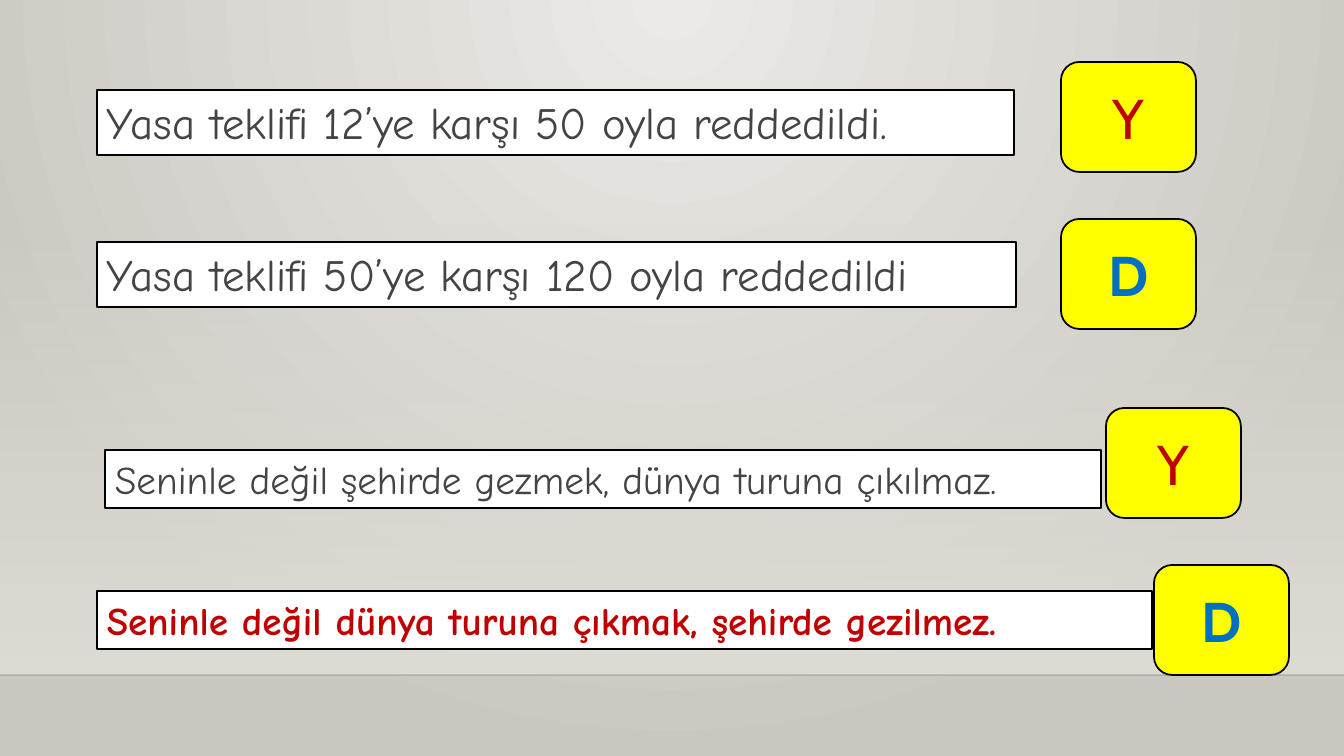
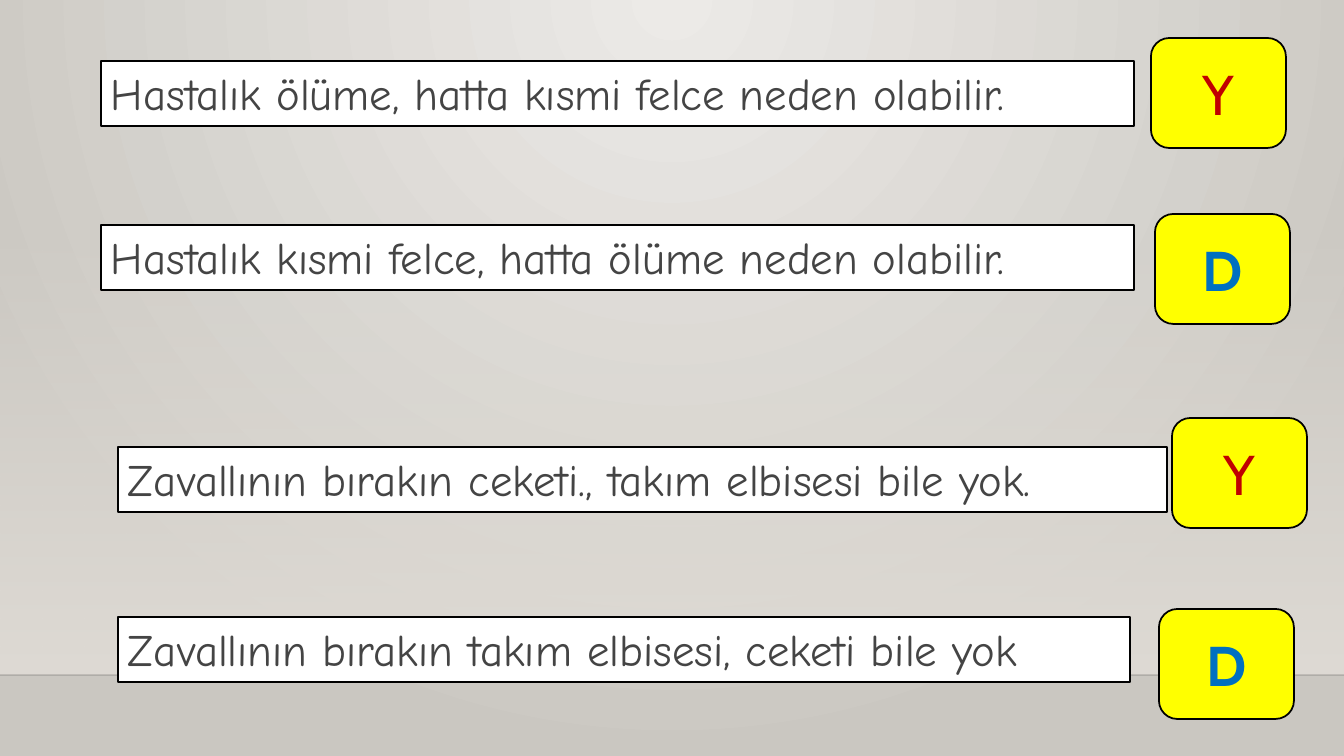
import typing
import dataclasses

import lxml.etree
import pptx
import pptx.dml.color
import pptx.dml.fill
import pptx.enum.shapes
import pptx.enum.text
import pptx.oxml.ns
import pptx.util

RGB = pptx.dml.color.RGBColor
SHAPE = pptx.enum.shapes.MSO_SHAPE
ALIGN = pptx.enum.text.PP_ALIGN
ANCHOR = pptx.enum.text.MSO_ANCHOR

WIDE, HIGH = 1344, 756
SCALE = 12192000 / WIDE
BAND_TOP, FLOOR = 223, 675
CARD_W, CARD_H = 135, 110

GLOW = RGB(0xEC, 0xEA, 0xE7)
EDGE = RGB(0xCA, 0xC7, 0xC1)
WALL = RGB(0xDF, 0xDB, 0xD5)
DARK = RGB(0x00, 0x00, 0x01)
BLACK = RGB(0x00, 0x00, 0x00)
WHITE = RGB(0xFF, 0xFF, 0xFF)
YELLOW = RGB(0xFF, 0xFF, 0x00)
GREY = RGB(0x44, 0x44, 0x44)
RED = RGB(0xC0, 0x00, 0x00)
BLUE = RGB(0x00, 0x70, 0xC0)


@dataclasses.dataclass(frozen=True)
class Row:
    text: str
    left: int
    top: int
    width: int
    mark: str
    card: tuple[int, int]
    size: int = 32
    color: RGB = GREY
    bold: bool = False


DECK = (
    (
        Row("Yasa teklifi 12’ye karşı 50 oyla reddedildi.", 97, 90, 917, "Y", (1061, 62)),
        Row("Yasa teklifi 50’ye karşı 120 oyla reddedildi", 97, 242, 919, "D", (1061, 219)),
        Row("Seninle değil şehirde gezmek, dünya turuna çıkılmaz.", 105, 450, 996,
            "Y", (1106, 408), size=28),
        Row("Seninle değil dünya turuna çıkmak, şehirde gezilmez.", 97, 591, 1055,
            "D", (1154, 565), size=28, color=RED, bold=True),
    ),
    (
        Row("Hastalık ölüme, hatta kısmi felce neden olabilir.", 101, 61, 1033, "Y", (1151, 38)),
        Row("Hastalık kısmi felce, hatta ölüme neden olabilir.", 101, 225, 1033, "D", (1155, 214)),
        Row("Zavallının bırakın ceketi., takım elbisesi bile yok.", 118, 447, 1049,
            "Y", (1172, 418)),
        Row("Zavallının bırakın takım elbisesi, ceketi bile yok", 118, 617, 1012,
            "D", (1159, 609)),
    ),
)
BOX_HIGH = {32: 65, 28: 58}
MARKS = {"Y": (RED, False), "D": (BLUE, True)}


def px(count: int) -> pptx.util.Emu:
    return pptx.util.Emu(round(count * SCALE))


def child(parent: typing.Any, tag: str, **attrs: str) -> typing.Any:
    node = lxml.etree.SubElement(parent, pptx.oxml.ns.qn(tag))
    for name, value in attrs.items():
        node.set(name, value)
    return node


def blend(fill: pptx.dml.fill.FillFormat, first: RGB, last: RGB) -> None:
    fill.gradient()
    for stop, color, place in zip(fill.gradient_stops, (first, last), (0, 1)):
        stop.color.rgb = color
        stop.position = place


def fade(node: typing.Any, share: int) -> None:
    color = node.find(".//" + pptx.oxml.ns.qn("a:srgbClr"))
    child(color, "a:alpha", val=str(share * 1000))


def panel(slide: typing.Any, kind: SHAPE, left: int, top: int,
          width: int, height: int) -> typing.Any:
    shape = slide.shapes.add_shape(kind, px(left), px(top), px(width), px(height))
    shape.shadow.inherit = False
    return shape


def write(shape: typing.Any, text: str, *, font: str, size: int, color: RGB,
          bold: bool = False, align: ALIGN = ALIGN.LEFT,
          anchor: ANCHOR = ANCHOR.TOP) -> None:
    frame = shape.text_frame
    frame.word_wrap = True
    frame.vertical_anchor = anchor
    para = frame.paragraphs[0]
    para.alignment = align
    run = para.add_run()
    run.text = text
    run.font.name = font
    run.font.size = pptx.util.Pt(size)
    run.font.bold = bold
    run.font.color.rgb = color


def label(slide: typing.Any, kind: SHAPE, left: int, top: int, width: int,
          height: int, fill: RGB, text: str, **style: typing.Any) -> None:
    shape = panel(slide, kind, left, top, width, height)
    shape.fill.solid()
    shape.fill.fore_color.rgb = fill
    shape.line.color.rgb = BLACK
    shape.line.width = pptx.util.Pt(1.25)
    write(shape, text, **style)


def backdrop(master: typing.Any) -> None:
    blend(master.background.fill, GLOW, EDGE)
    grad = master.element.find(".//" + pptx.oxml.ns.qn("a:gradFill"))
    grad.remove(grad.find(pptx.oxml.ns.qn("a:lin")))
    ring = child(grad, "a:path", path="circle")
    child(ring, "a:fillToRect", l="43000", t="0", r="43000", b="100000")


def stage(slide: typing.Any) -> None:
    layout = slide.slide_layout
    for holder in list(layout.placeholders):
        layout.shapes.element.remove(holder.element)

    wall = panel(slide, SHAPE.RECTANGLE, 0, BAND_TOP, WIDE, FLOOR - BAND_TOP)
    blend(wall.fill, WALL, WALL)
    wall.fill.gradient_angle = 270
    fade(wall.element, 0)
    wall.line.fill.background()

    edge = slide.shapes.add_connector(pptx.enum.shapes.MSO_CONNECTOR.STRAIGHT,
                                      px(0), px(FLOOR), px(WIDE), px(FLOOR))
    edge.line.color.rgb = DARK
    edge.line.width = pptx.util.Pt(1)
    fade(edge.element, 20)
    child(edge.element.spPr, "a:effectLst")

    for shape in (wall, edge):
        layout.shapes.element.append(shape.element)


def draw(slide: typing.Any, row: Row) -> None:
    label(slide, SHAPE.RECTANGLE, row.left, row.top, row.width, BOX_HIGH[row.size],
          WHITE, row.text, font="Comic Neue", size=row.size, color=row.color, bold=row.bold)
    color, bold = MARKS[row.mark]
    label(slide, SHAPE.ROUNDED_RECTANGLE, *row.card, CARD_W, CARD_H, YELLOW, row.mark,
          font="Cabin", size=40, color=color, bold=bold,
          align=ALIGN.CENTER, anchor=ANCHOR.MIDDLE)


def main() -> None:
    deck = pptx.Presentation()
    deck.slide_width, deck.slide_height = px(WIDE), px(HIGH)
    backdrop(deck.slide_master)
    blank = deck.slide_layouts[6]
    for index, rows in enumerate(DECK):
        slide = deck.slides.add_slide(blank)
        if index == 0:
            stage(slide)
        for row in rows:
            draw(slide, row)
    deck.save("out.pptx")


if __name__ == "__main__":
    main()
